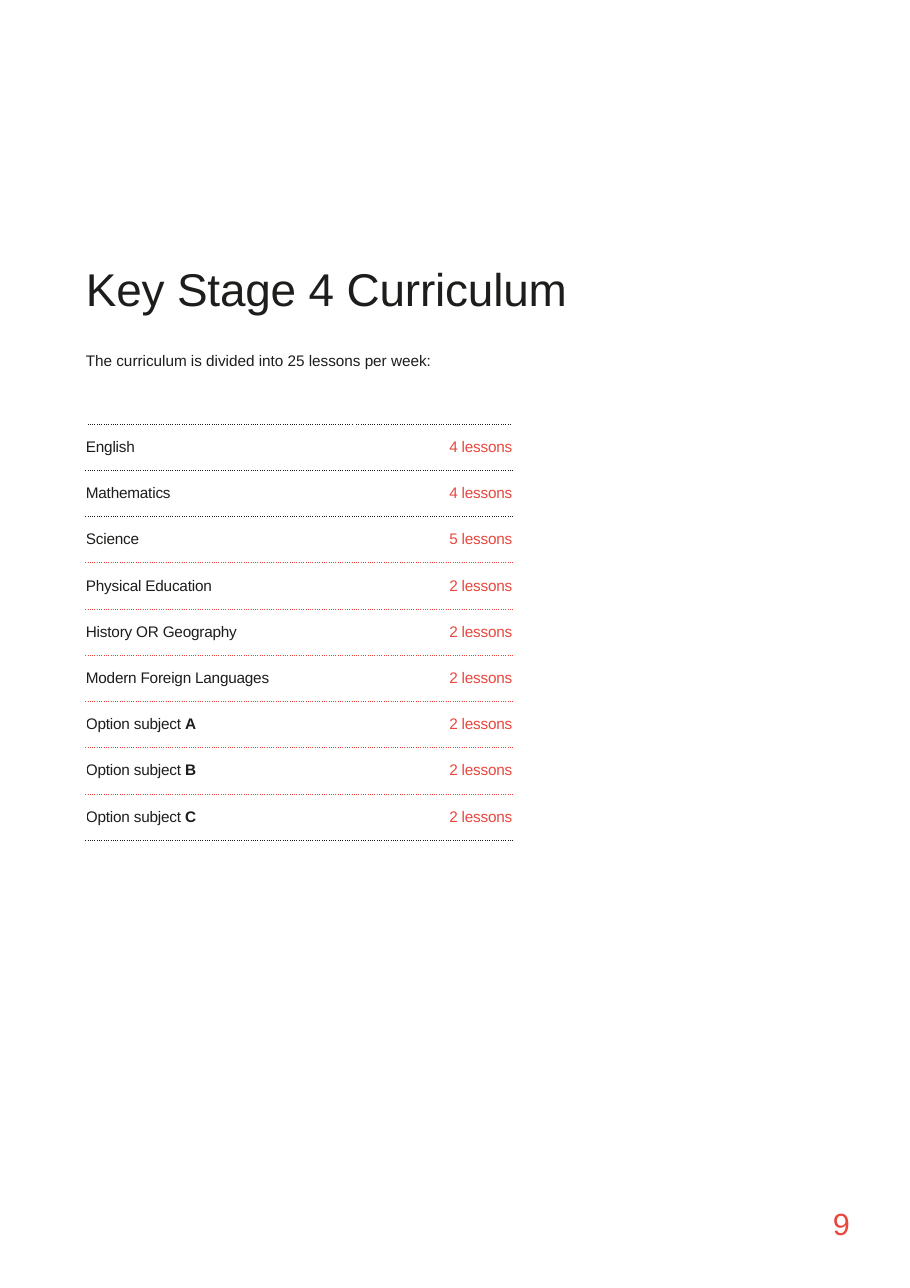
from lxml import etree
from pptx import Presentation
from pptx.dml.color import RGBColor
from pptx.enum.text import PP_ALIGN
from pptx.oxml.ns import qn
from pptx.util import Inches, Pt

LEFT, RIGHT = PP_ALIGN.LEFT, PP_ALIGN.RIGHT
INK = RGBColor(0x1D, 0x1D, 0x1B)
RED = RGBColor(0xE9, 0x47, 0x3E)

# Each subject: plain name, bold letter, lessons per week
SUBJECTS = [
    ("English", "", 4),
    ("Mathematics", "", 4),
    ("Science", "", 5),
    ("Physical Education", "", 2),
    ("History OR Geography", "", 2),
    ("Modern Foreign Languages", "", 2),
    ("Option subject ", "A", 2),
    ("Option subject ", "B", 2),
    ("Option subject ", "C", 2),
]
RULES = [INK] * 3 + [RED] * 6 + [INK]


def write(frame, text, bold="", size=10, color=INK, align=LEFT, track=-0.1,
          left=0, top=0.02):
    """Fill a frame or cell with plain text and an optional bold ending."""
    frame.margin_left, frame.margin_top = Inches(left), Inches(top)
    frame.margin_right = frame.margin_bottom = 0
    frame.word_wrap = True
    para = getattr(frame, "text_frame", frame).paragraphs[0]
    para.alignment = align
    for part, heavy in ((text, False), (bold, True)):
        if part:
            run = para.add_run()
            run.text = part
            font = run.font
            font.name, font.size, font.bold = "Arial", Pt(size), heavy
            font.color.rgb = color
            run._r.get_or_add_rPr().set("spc", str(round(track * 100)))


def rule(cell, side, color):
    """Draw a dotted border on one side of a cell: lnT or lnB."""
    line = etree.Element(qn("a:" + side), w=str(Pt(0.75)))
    fill = etree.SubElement(line, qn("a:solidFill"))
    etree.SubElement(fill, qn("a:srgbClr"), val=str(color))
    etree.SubElement(line, qn("a:prstDash"), val="sysDot")
    props = cell._tc.get_or_add_tcPr()
    props.insert(len(props.findall(qn("a:lnT"))), line)


deck = Presentation()
deck.slide_width, deck.slide_height = Inches(8.26), Inches(11.69)
slide = deck.slides.add_slide(deck.slide_layouts[6])

# Heading, introduction and page number
for text, box, style in [
    ("Key Stage 4 Curriculum", (0.77, 2.35, 5.32, 0.53),
     dict(size=30, left=0.01)),
    ("The curriculum is divided into 25 lessons per week:",
     (0.77, 3.17, 3.16, 0.19), dict(track=0, left=0.01)),
    ("9", (7.36, 10.92, 0.41, 0.36),
     dict(size=20, color=RED, track=-0.5, left=0.2)),
]:
    frame = slide.shapes.add_textbox(*map(Inches, box)).text_frame
    write(frame, text, **style)

# Lessons table
high = 0.42
table = slide.shapes.add_table(
    len(SUBJECTS), 2, Inches(0.78), Inches(3.85),
    Inches(3.87), Inches(high * len(SUBJECTS))).table
table.first_row = table.horz_banding = False
table.columns[0].width, table.columns[1].width = Inches(2.44), Inches(1.43)

for row, (name, letter, count) in enumerate(SUBJECTS):
    table.rows[row].height = Inches(high)
    subject, lessons = table.cell(row, 0), table.cell(row, 1)
    write(subject, name, bold=letter, top=0.13)
    write(lessons, f"{count} lessons", color=RED, align=RIGHT, top=0.13)
    for cell in (subject, lessons):
        cell.fill.background()
        rule(cell, "lnT", RULES[row])
        rule(cell, "lnB", RULES[row + 1])

deck.save("out.pptx")
